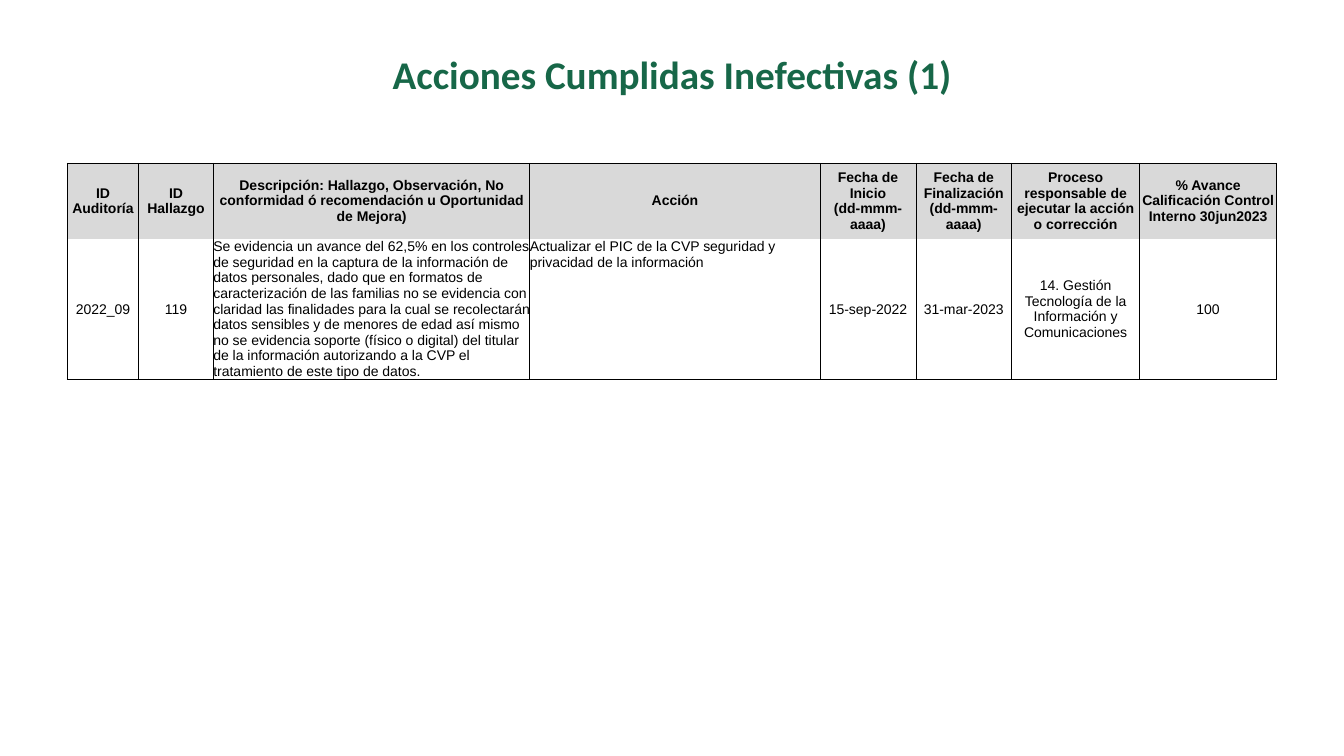
from lxml import etree
from pptx import Presentation, util as u
from pptx.dml.color import RGBColor
from pptx.enum import text
from pptx.oxml import ns

GREEN = RGBColor(0x17, 0x67, 0x48)
GRAY = RGBColor(0xD9, 0xD9, 0xD9)
BLACK = RGBColor(0, 0, 0)

WIDE, HIGH = 13.33, 7.5
LEFT, SPAN = WIDE * 0.05, WIDE * 0.9
COLS = [0.71, 0.74, 3.14, 2.88, 0.95, 0.95, 1.27, 1.36]
ROWS = [0.75, 1.39]
LONG = (2, 3)  # columns whose body text runs from the top left

HEADS = [
    "ID Auditoría", "ID Hallazgo",
    "Descripción: Hallazgo, Observación, No conformidad ó recomendación "
    "u Oportunidad de Mejora)",
    "Acción", "Fecha de Inicio\v(dd-mmm-aaaa)",
    "Fecha de Finalización\v(dd-mmm-aaaa)",
    "Proceso responsable de ejecutar la acción o corrección",
    "% Avance Calificación Control Interno 30jun2023",
]
BODY = [
    "2022_09", "119",
    "Se evidencia un avance del 62,5% en los controles de seguridad en la "
    "captura de la información de datos personales, dado que en formatos de "
    "caracterización de las familias no se evidencia con claridad las "
    "finalidades para la cual se recolectarán datos sensibles y de menores "
    "de edad así mismo no se evidencia soporte (físico o digital) del "
    "titular de la información autorizando a la CVP el tratamiento de este "
    "tipo de datos.",
    "Actualizar el PIC de la CVP seguridad y privacidad de la información",
    "15-sep-2022", "31-mar-2023",
    "14. Gestión Tecnología de la Información y Comunicaciones", "100",
]


def style(par, face, size, color, bold, align):
    par.alignment = align
    font = par.font
    font.name, font.size, font.bold = face, u.Pt(size), bold
    font.color.rgb = color


def edge(cell, sides):
    """Draw the named sides of a cell and clear the others."""
    props = cell._tc.get_or_add_tcPr()
    for side in "LRTB":
        line = etree.SubElement(props, ns.qn("a:ln" + side), w=str(u.Pt(0.5)))
        if side in sides:
            fill = etree.SubElement(line, ns.qn("a:solidFill"))
            etree.SubElement(fill, ns.qn("a:srgbClr"), val=str(BLACK))
        else:
            etree.SubElement(line, ns.qn("a:noFill"))


def title(slide, left, top, width, height):
    head = slide.shapes.title
    head.left, head.top = u.Inches(left), u.Inches(top)
    head.width, head.height = u.Inches(width), u.Inches(height)
    frame = head.text_frame
    frame.text = "Acciones Cumplidas Inefectivas (1)"
    frame.vertical_anchor = text.MSO_ANCHOR.MIDDLE
    style(frame.paragraphs[0], "Calibri", 28, GREEN, True, text.PP_ALIGN.CENTER)


def fill_cell(cell, words, head, long):
    cell.margin_left = cell.margin_right = 0
    cell.margin_top = cell.margin_bottom = 0
    cell.vertical_anchor = text.MSO_ANCHOR.TOP if long else text.MSO_ANCHOR.MIDDLE
    edge(cell, "LRT" if head else "LRB")
    if head:
        cell.fill.solid()
        cell.fill.fore_color.rgb = GRAY
    else:
        cell.fill.background()
    cell.text = words
    align = text.PP_ALIGN.LEFT if long else text.PP_ALIGN.CENTER
    style(cell.text_frame.paragraphs[0], "Arial", 10, BLACK, head, align)


def table(slide, left, top, width):
    grid = slide.shapes.add_table(
        len(ROWS), len(COLS), u.Inches(left), u.Inches(top),
        u.Inches(width), u.Inches(sum(ROWS))).table
    grid.first_row = grid.horz_banding = False
    for col, share in zip(grid.columns, COLS):
        col.width = u.Inches(width * share / sum(COLS))
    for row, tall in zip(grid.rows, ROWS):
        row.height = u.Inches(tall)
    for r, line in enumerate((HEADS, BODY)):
        for c, words in enumerate(line):
            fill_cell(grid.cell(r, c), words, r == 0, r > 0 and c in LONG)


def main():
    deck = Presentation()
    deck.slide_width, deck.slide_height = u.Inches(WIDE), u.Inches(HIGH)
    slide = deck.slides.add_slide(deck.slide_layouts[5])
    title(slide, LEFT, HIGH * 0.04, SPAN, HIGH * 0.116)
    table(slide, LEFT, HIGH * 0.216, SPAN)
    deck.save("out.pptx")


if __name__ == "__main__":
    main()
